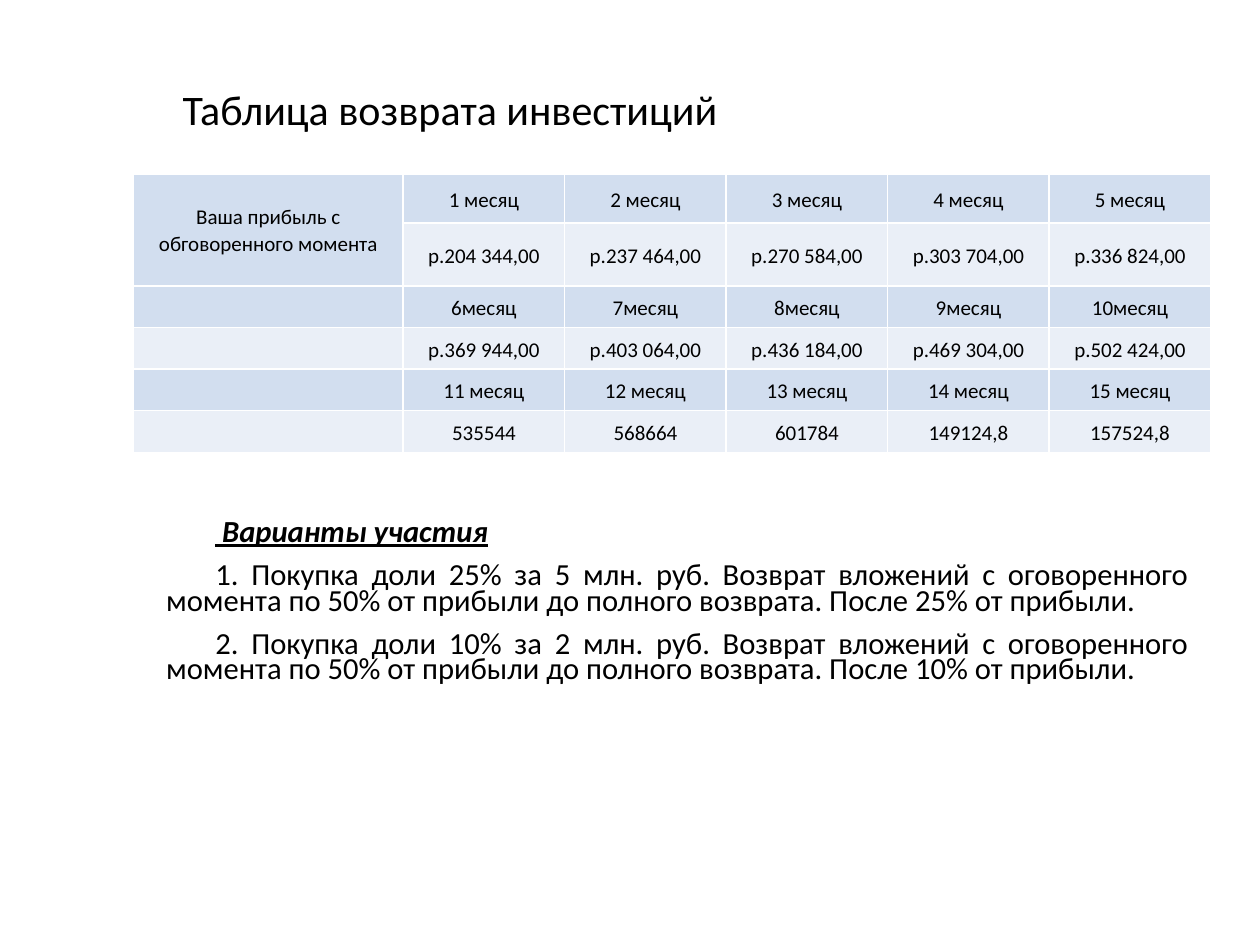
from pptx import Presentation
from pptx.dml.color import RGBColor
from pptx.enum.text import MSO_ANCHOR, MSO_AUTO_SIZE, PP_ALIGN
from pptx.util import Inches, Pt

LEFT, MID, JUST = PP_ALIGN.LEFT, PP_ALIGN.CENTER, PP_ALIGN.JUSTIFY
TOP, CENTER = MSO_ANCHOR.TOP, MSO_ANCHOR.MIDDLE
FIXED = MSO_AUTO_SIZE.NONE
TITLE_ONLY = 5
COLORS = {"text": "000000", "dark": "D2DEEF", "light": "EAEFF7"}
FONT = "Calibri"
UNIT = Inches(0.1)  # the slide is a grid of 100 columns by 75 rows


def grid(*cells):
    return [round(n * UNIT) for n in cells]


class Page:
    def __init__(self, deck):
        self.slide = deck.slides.add_slide(deck.slide_layouts[TITLE_ONLY])

    def style(self, para, size, align, pitch, mark=False):
        para.alignment, para.line_spacing = align, pitch
        font = para.font
        font.name, font.size = FONT, Pt(size)
        font.bold = font.italic = font.underline = mark
        font.color.rgb = RGBColor.from_string(COLORS["text"])

    def title(self, text, box):
        shape = self.slide.shapes.title
        shape.left, shape.top, shape.width, shape.height = grid(*box)
        frame = shape.text_frame
        frame.text = text
        frame.vertical_anchor, frame.auto_size = TOP, FIXED
        self.style(frame.paragraphs[0], 24, LEFT, 0.9)

    def table(self, head, rows, box, cols, highs):
        frame = self.slide.shapes.add_table(len(rows), len(cols), *grid(*box))
        table = frame.table
        table.first_row = table.horz_banding = False
        for col, wide in zip(table.columns, grid(*cols)):
            col.width = wide
        for row, high in zip(table.rows, grid(*highs)):
            row.height = high
        for i, row in enumerate(rows):
            for j, text in enumerate([""] + row):
                self.cell(table.cell(i, j), text, "light" if i % 2 else "dark")
        # Row heading across the first two rows
        first = table.cell(0, 0)
        first.merge(table.cell(1, 0))
        self.cell(first, head, "dark", 1.07)

    def cell(self, cell, text, fill, pitch=1.15):
        cell.fill.solid()
        cell.fill.fore_color.rgb = RGBColor.from_string(COLORS[fill])
        cell.vertical_anchor = CENTER
        cell.margin_left = cell.margin_right = Inches(0.07)
        cell.margin_top = cell.margin_bottom = 0
        cell.text = text
        self.style(cell.text_frame.paragraphs[0], 12, MID, pitch)

    def body(self, head, items, box):
        frame = self.slide.shapes.add_textbox(*grid(*box)).text_frame
        frame.word_wrap = True
        for i, text in enumerate([head] + items):
            para = frame.add_paragraph() if i else frame.paragraphs[0]
            para.text = text
            props = para._p.get_or_add_pPr()
            props.set("marL", "0")
            props.set("indent", str(Inches(0.39)))
            if i:
                para.space_before = Pt(10)
            self.style(para, 17.5, JUST, 0.7, mark=i == 0)


def months(start, gap=" "):
    return [f"{n}{gap}месяц" for n in range(start, start + 5)]


def sums(*values):
    return [f"р.{value},00" for value in values]


def main():
    deck = Presentation()
    deck.slide_width, deck.slide_height = grid(100, 75)
    page = Page(deck)

    # Title
    page.title("Таблица возврата инвестиций", (13.5, 6.6, 83.3, 39.5))

    # Monthly returns
    rows = [
        months(1),
        sums("204 344", "237 464", "270 584", "303 704", "336 824"),
        months(6, ""),
        sums("369 944", "403 064", "436 184", "469 304", "502 424"),
        months(11),
        ["535544", "568664", "601784", "149124,8", "157524,8"],
    ]
    page.table("Ваша прибыль с обговоренного момента", rows,
               (10.6, 13.8, 85.5, 22.1), [21.4] + [12.82] * 5,
               [3.9, 5] + [3.3] * 4)

    # Ways to take part
    deals = [(25, 5), (10, 2)]
    items = [
        f"{i}. Покупка доли {share}% за {price} млн. руб. Возврат вложений "
        "с оговоренного момента по 50% от прибыли до полного возврата. "
        f"После {share}% от прибыли."
        for i, (share, price) in enumerate(deals, 1)
    ]
    page.body(" Варианты участия", items, (12.2, 40.9, 83.2, 18.1))

    deck.save("out.pptx")


if __name__ == "__main__":
    main()
